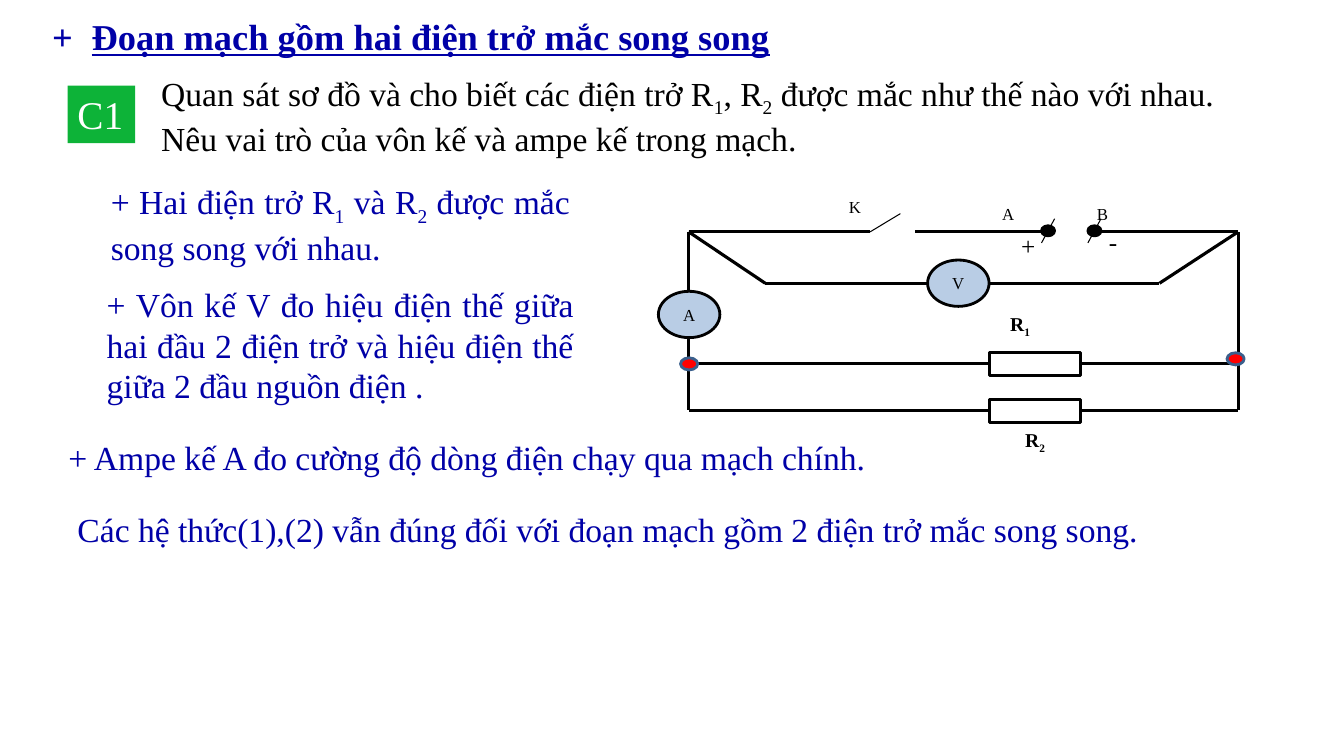
from dataclasses import dataclass

from lxml.etree import SubElement
from pptx import Presentation
from pptx.dml.color import RGBColor
from pptx.enum.shapes import MSO_CONNECTOR as Connector, MSO_SHAPE as Shape
from pptx.enum.text import MSO_ANCHOR as Anchor, PP_ALIGN as Align
from pptx.oxml.ns import qn
from pptx.util import Inches, Pt


@dataclass(frozen=True)
class Theme:
    font: str = "Times New Roman"
    black: str = "000000"
    white: str = "FFFFFF"
    navy: str = "0000A7"
    green: str = "0DB338"
    meter: str = "B9CDE5"
    red: str = "FF0000"
    node_edge: str = "3A5F8C"
    title: int = 26
    body: int = 24
    badge: int = 28
    terminal: int = 18
    resistor: int = 14
    label: int = 12
    wire: float = 2.25
    outline: float = 2
    thin: float = 0.75


class CircuitSlide:
    def __init__(self, deck, theme):
        self.theme = theme
        self.page = deck.slides.add_slide(deck.slide_layouts[6])

    def style(self, para, size, color, bold=False):
        font = para.font
        font.name, font.size, font.bold = self.theme.font, Pt(size), bold
        font.color.rgb = RGBColor.from_string(color)

    def fill_text(self, frame, text, size, color, bold=False, align=Align.LEFT):
        frame.word_wrap = True
        para = frame.paragraphs[0]
        para.alignment = align
        self.style(para, size, color, bold)
        for index, part in enumerate(text.split("|")):
            span = para.add_run()
            span.text = part
            if index % 2:
                span._r.get_or_add_rPr().set("baseline", "-25000")

    def text(self, at, text, size, color, bold=False, align=Align.LEFT):
        box = self.page.shapes.add_textbox(*map(Inches, at))
        self.fill_text(box.text_frame, text, size, color, bold, align)
        return box

    def label(self, at, text, size, bold=False):
        box = self.text(at, text, size, self.theme.black, bold)
        box.text_frame.margin_right = 0

    def title(self, at, sign, text, indent):
        box = self.page.shapes.add_textbox(*map(Inches, at))
        frame = box.text_frame
        frame.word_wrap = True
        frame.vertical_anchor = Anchor.MIDDLE
        para = frame.paragraphs[0]
        tabs = SubElement(para._p.get_or_add_pPr(), qn("a:tabLst"))
        SubElement(tabs, qn("a:tab"), pos=str(Inches(indent)), algn="l")
        self.style(para, self.theme.title, self.theme.navy, bold=True)
        para.add_run().text = sign + "\t"
        heading = para.add_run()
        heading.text = text
        heading.font.underline = True

    def shape(self, kind, at, fill, edge=None, width=None):
        shape = self.page.shapes.add_shape(kind, *map(Inches, at))
        shape.shadow.inherit = False
        shape.fill.solid()
        shape.fill.fore_color.rgb = RGBColor.from_string(fill)
        if edge:
            shape.line.color.rgb = RGBColor.from_string(edge)
            shape.line.width = Pt(width)
        else:
            shape.line.fill.background()
        return shape

    def badge(self, at, text):
        badge = self.shape(Shape.RECTANGLE, at, self.theme.green)
        badge.text_frame.vertical_anchor = Anchor.TOP
        self.fill_text(badge.text_frame, text, self.theme.badge, self.theme.white)

    def dot(self, left, top, width, height, fill, edge):
        self.shape(Shape.OVAL, (left, top, width, height), fill, edge, self.theme.outline)

    def meter(self, left, top, name):
        theme = self.theme
        meter = self.shape(Shape.OVAL, (left, top, 0.61, 0.46), theme.meter, theme.black, theme.outline)
        meter.text_frame.vertical_anchor = Anchor.MIDDLE
        self.fill_text(meter.text_frame, name, theme.label, theme.black, align=Align.CENTER)

    def resistor(self, left, top):
        theme = self.theme
        self.shape(Shape.RECTANGLE, (left, top, 0.91, 0.23), theme.white, theme.black, theme.wire)

    def wire(self, start, end, width):
        line = self.page.shapes.add_connector(Connector.STRAIGHT, *map(Inches, start + end))
        line.line.color.rgb = RGBColor.from_string(self.theme.black)
        line.line.width = Pt(width)
        SubElement(line._element.spPr, qn("a:effectLst"))


def add_text(slide, theme):
    slide.title((0.42, 0.05, 10.33, 0.62), "+", "Đoạn mạch gồm hai điện trở mắc song song", 0.39)
    slide.text(
        (1.5, 0.67, 10.75, 0.92),
        "Quan sát sơ đồ và cho biết các điện trở R|1|, R|2| được mắc như thế nào với nhau. "
        "Nêu vai trò của vôn kế và ampe kế trong mạch.",
        theme.body, theme.black,
    )
    answers = [
        ((1, 1.75, 4.75, 0.91), "+ Hai điện trở R|1| và R|2| được mắc song song với nhau."),
        ((0.96, 2.77, 4.83, 1.31), "+ Vôn kế V đo hiệu điện thế giữa hai đầu 2 điện trở "
                                   "và hiệu điện thế giữa 2 đầu nguồn điện ."),
        ((0.58, 4.29, 9.58, 0.5), "+ Ampe kế A đo cường độ dòng điện chạy qua mạch chính."),
        ((0.67, 5, 11.42, 0.5), "Các hệ thức(1),(2) vẫn đúng đối với đoạn mạch gồm "
                                "2 điện trở mắc song song."),
    ]
    for at, answer in answers:
        slide.text(at, answer, theme.body, theme.navy, align=Align.JUSTIFY)
    slide.badge((0.67, 0.85, 0.67, 0.57), "C1")


def add_circuit(slide, theme):
    left, right = 6.83, 12.28
    top, volt_row, first_row, second_row = 2.3, 2.81, 3.61, 4.07
    switch, plus, minus = 8.63, 10.33, 10.79
    part_left, part_right = 9.81, 10.72
    volt_left, volt_right = 9.2, 9.81

    wires = [
        ((left, top), (switch, top)),
        ((9.08, top), (plus, top)),
        ((minus + 0.13, top), (right, top)),
        ((left, top), (left, 2.89)),
        ((left, 3.35), (left, second_row)),
        ((right, top), (right, second_row)),
        ((left, top), (7.59, volt_row)),
        ((7.59, volt_row), (volt_left, volt_row)),
        ((volt_right, volt_row), (11.5, volt_row)),
        ((11.5, volt_row), (right, top)),
    ]
    for row in (first_row, second_row):
        wires.append(((left, row), (part_left, row)))
        wires.append(((part_right, row), (right, row)))
        slide.resistor(part_left, row - 0.11)
    for start, end in wires:
        slide.wire(start, end, theme.wire)

    slide.wire((switch, top), (8.93, 2.12), theme.thin)
    for terminal in (plus, minus):
        slide.dot(terminal, top - 0.06, 0.13, 0.1, theme.black, theme.black)
        slide.wire((terminal + 0.13, 2.17), (terminal, 2.41), theme.thin)

    slide.meter(6.53, 2.89, "A")
    slide.meter(volt_left, 2.58, "V")

    for x, y, name in ((8.32, 1.9, "K"), (9.84, 1.97, "A"), (10.78, 1.97, "B")):
        slide.label((x, y, 0.32, 0.3), name, theme.label)
    for x, y, name in ((9.92, 3.05, "R|1"), (10.07, 4.2, "R|2")):
        slide.label((x, y, 0.45, 0.34), name, theme.resistor, bold=True)
    for x, y, sign in ((10.03, 2.24, "+"), (10.9, 2.2, "-")):
        slide.label((x, y, 0.38, 0.42), sign, theme.terminal)

    for x, y in ((6.75, 3.55), (12.17, 3.5)):
        slide.dot(x, y, 0.17, 0.12, theme.red, theme.node_edge)


def main():
    deck = Presentation()
    deck.slide_width, deck.slide_height = Inches(13.33), Inches(7.5)
    theme = Theme()
    slide = CircuitSlide(deck, theme)
    add_text(slide, theme)
    add_circuit(slide, theme)
    deck.save("out.pptx")


if __name__ == "__main__":
    main()
